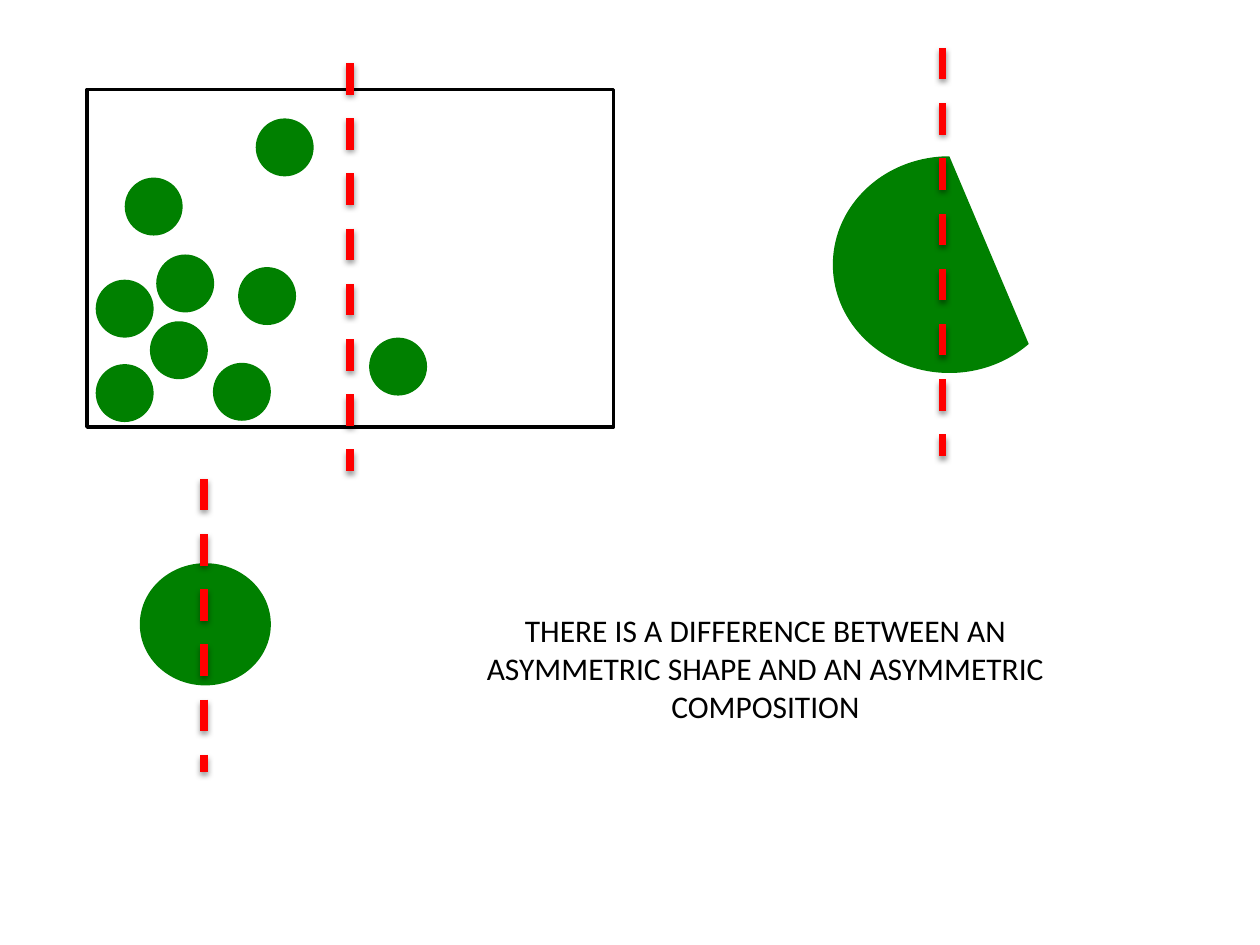
from dataclasses import dataclass

from lxml import etree
from pptx import Presentation
from pptx.dml.color import RGBColor
from pptx.enum.dml import MSO_LINE
from pptx.enum.shapes import MSO_CONNECTOR, MSO_SHAPE
from pptx.enum.text import MSO_AUTO_SIZE, PP_ALIGN
from pptx.oxml import parse_xml
from pptx.util import Inches, Pt

RECTANGLE, OVAL, CHORD = MSO_SHAPE.RECTANGLE, MSO_SHAPE.OVAL, MSO_SHAPE.CHORD
STRAIGHT = MSO_CONNECTOR.STRAIGHT
DASH = MSO_LINE.DASH
CENTER = PP_ALIGN.CENTER
GROW = MSO_AUTO_SIZE.SHAPE_TO_FIT_TEXT
BLANK_LAYOUT = 6

AXIS_SHADOW = (
    '<a:effectLst xmlns:a="http://schemas.openxmlformats.org/drawingml/2006/main">'
    '<a:outerShdw blurRad="40000" dist="20000" dir="5400000" rotWithShape="0">'
    '<a:srgbClr val="000000"><a:alpha val="38000"/></a:srgbClr>'
    '</a:outerShdw></a:effectLst>'
)


@dataclass(frozen=True)
class Theme:
    paper: RGBColor = RGBColor(255, 255, 255)
    ink: RGBColor = RGBColor(0, 0, 0)
    green: RGBColor = RGBColor(0, 128, 0)
    red: RGBColor = RGBColor(255, 0, 0)
    font: str = "Calibri"
    text_size: int = 18
    frame_width: float = 2
    axis_width: float = 4.5


class SymmetryPage:
    """Draws on one page in one theme; all lengths are in inches."""

    def __init__(self, page, theme):
        self.page = page
        self.theme = theme

    def add_figure(self, kind, left, top, width, height, fill):
        figure = self.page.shapes.add_shape(
            kind, Inches(left), Inches(top), Inches(width), Inches(height))
        figure.shadow.inherit = False
        figure.fill.solid()
        figure.fill.fore_color.rgb = fill
        figure.line.fill.background()
        return figure

    def add_frame(self, left, top, width, height):
        frame = self.add_figure(RECTANGLE, left, top, width, height, self.theme.paper)
        frame.line.color.rgb = self.theme.ink
        frame.line.width = Pt(self.theme.frame_width)

    def add_green(self, kind, left, top, width, height):
        self.add_figure(kind, left, top, width, height, self.theme.green)

    def add_axis(self, x, top, bottom):
        axis = self.page.shapes.add_connector(
            STRAIGHT, Inches(x), Inches(top), Inches(x), Inches(bottom))
        axis.line.color.rgb = self.theme.red
        axis.line.width = Pt(self.theme.axis_width)
        axis.line.dash_style = DASH
        axis._element.spPr.append(parse_xml(AXIS_SHADOW))

    def add_caption(self, text, left, top, width, height):
        box = self.page.shapes.add_textbox(
            Inches(left), Inches(top), Inches(width), Inches(height))
        frame = box.text_frame
        frame.word_wrap = True
        frame.auto_size = GROW
        para = frame.paragraphs[0]
        para.text = text
        para.alignment = CENTER
        para.font.name = self.theme.font
        para.font.size = Pt(self.theme.text_size)
        para.font.color.rgb = self.theme.ink


DOT_SIZE = 0.46
DOT_CORNERS = [
    (1.24, 2.02), (0.99, 1.41), (1.19, 2.55),
    (2.03, 0.94), (1.89, 2.12), (0.76, 2.22),
    (2.93, 2.68), (0.76, 2.89), (1.69, 2.88),
]


def main():
    deck = Presentation()
    deck.slide_width, deck.slide_height = Inches(10), Inches(7.5)
    page = deck.slides.add_slide(deck.slide_layouts[BLANK_LAYOUT])
    drawing = SymmetryPage(page, Theme())

    drawing.add_frame(0.69, 0.71, 4.18, 2.68)
    drawing.add_green(CHORD, 6.61, 1.24, 1.85, 1.72)
    for left, top in DOT_CORNERS:
        drawing.add_green(OVAL, left, top, DOT_SIZE, DOT_SIZE)
    drawing.add_axis(2.78, 0.5, 3.74)
    drawing.add_axis(7.48, 0.38, 3.62)

    drawing.add_green(OVAL, 1.11, 4.47, 1.04, 0.97)
    drawing.add_axis(1.62, 3.8, 6.13)
    drawing.add_caption(
        "THERE IS A DIFFERENCE BETWEEN AN ASYMMETRIC SHAPE "
        "AND AN ASYMMETRIC COMPOSITION", 3.39, 4.8, 5.37, 1.01)

    deck.save("out.pptx")


if __name__ == "__main__":
    main()
